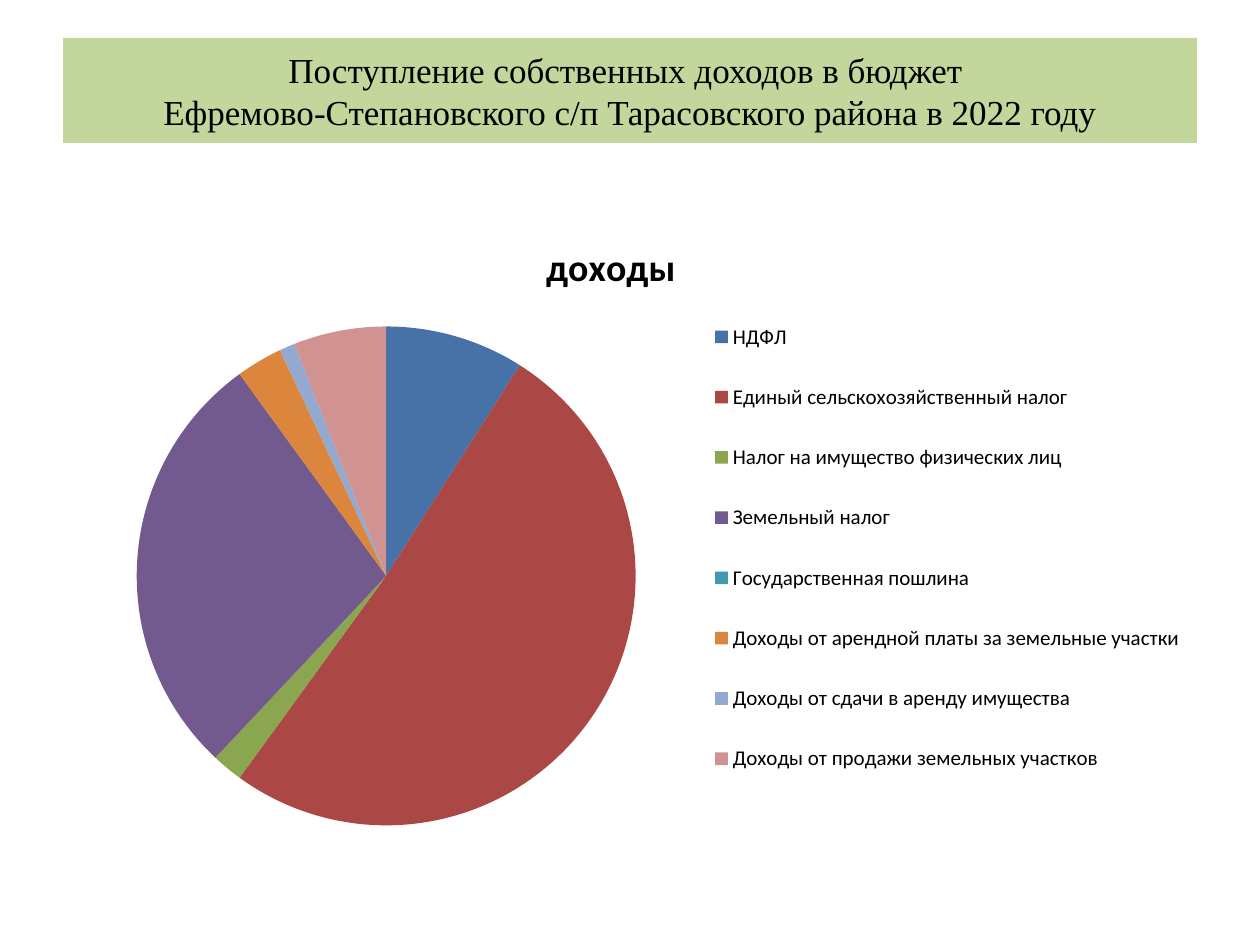
from dataclasses import dataclass
from pptx import Presentation
from pptx.chart.data import CategoryChartData as Data
from pptx.dml.color import RGBColor as RGB
from pptx.enum.chart import XL_CHART_TYPE as Kind, XL_LEGEND_POSITION as Side
from pptx.enum.text import MSO_ANCHOR as Anchor, MSO_AUTO_SIZE as Fit, PP_ALIGN as Align
from pptx.oxml import parse_xml
from pptx.oxml.ns import nsdecls
from pptx.util import Pt

BLACK = RGB(0x00, 0x00, 0x00)
LIME = RGB(0xC3, 0xD6, 0x9B)
BLUE = RGB(0x46, 0x72, 0xA8)
RED = RGB(0xAB, 0x47, 0x44)
GREEN = RGB(0x8A, 0xA6, 0x4F)
PLUM = RGB(0x72, 0x5A, 0x8F)
TEAL = RGB(0x42, 0x98, 0xAF)
AMBER = RGB(0xDC, 0x85, 0x3D)
SKY = RGB(0x93, 0xA9, 0xCF)
PINK = RGB(0xD1, 0x93, 0x92)


@dataclass
class Slice:
    name: str
    share: int
    color: RGB


SLICES = [
    Slice("НДФЛ", 9, BLUE),
    Slice("Единый сельскохозяйственный налог", 51, RED),
    Slice("Налог на имущество физических лиц", 2, GREEN),
    Slice("Земельный налог", 28, PLUM),
    Slice("Государственная пошлина", 0, TEAL),
    Slice("Доходы от арендной платы за земельные участки", 3, AMBER),
    Slice("Доходы от сдачи в аренду имущества", 1, SKY),
    Slice("Доходы от продажи земельных участков", 6, PINK),
]


def style(font, *, face: str, size: float, bold: bool = False) -> None:
    font.name = face
    font.size = Pt(size)
    font.bold = bold
    font.color.rgb = BLACK


def write(frame, text: str, *, align=Align.CENTER, **form) -> None:
    frame.text = text
    for para in frame.paragraphs:
        para.alignment = align
        for run in para.runs:
            style(run.font, **form)


def layout(x: float, y: float, w: float = 0, h: float = 0, inner: bool = False):
    parts = '<c:layoutTarget val="inner"/>' if inner else ""
    parts += '<c:xMode val="edge"/><c:yMode val="edge"/>'
    for key, val in zip("xywh", (x, y, w, h)):
        if val:
            parts += f'<c:{key} val="{val}"/>'
    return parse_xml(
        f'<c:layout {nsdecls("c")}><c:manualLayout>{parts}</c:manualLayout></c:layout>'
    )


def place(node, box, spot: int) -> None:
    for old in node.findall(box.tag):
        node.remove(old)
    node.insert(spot, box)


def draw_head(slide) -> None:
    head = slide.shapes.title
    head.left, head.top, head.width, head.height = Pt(36), Pt(21.6), Pt(648), Pt(60)
    head.fill.solid()
    head.fill.fore_color.rgb = LIME
    frame = head.text_frame
    frame.auto_size = Fit.NONE
    frame.vertical_anchor = Anchor.MIDDLE
    write(
        frame,
        "Поступление собственных доходов в бюджет \v"
        "Ефремово-Степановского с/п Тарасовского района в 2022 году",
        face="Times New Roman",
        size=20,
    )


def draw_pie(slide, slices: list[Slice]) -> None:
    data = Data()
    data.categories = [part.name for part in slices]
    data.add_series("доходы", [part.share for part in slices])
    chart = slide.shapes.add_chart(
        Kind.PIE, Pt(36), Pt(126), Pt(648), Pt(356.4), data
    ).chart
    style(chart.font, face="Calibri", size=18)

    chart.has_title = True
    title = chart.chart_title
    write(title.text_frame, "доходы", face="Calibri", size=21.6, bold=True)
    title.include_in_layout = False
    place(title._element, layout(0.42, 0.02), 1)

    chart.has_legend = True
    legend = chart.legend
    legend.position = Side.RIGHT
    legend.include_in_layout = False
    style(legend.font, face="Calibri", size=12)
    place(legend._element, layout(0.57, 0.11, 0.42, 0.83), 1)

    plot = chart.plots[0]
    plot.vary_by_categories = True
    for spot, part in enumerate(slices):
        fill = plot.series[0].points[spot].format.fill
        fill.solid()
        fill.fore_color.rgb = part.color
    area = plot._element.getparent()
    place(area, layout(0.06, 0.17, 0.45, 0.8, inner=True), 0)


def main() -> None:
    deck = Presentation()
    deck.slide_width, deck.slide_height = Pt(720), Pt(540)
    slide = deck.slides.add_slide(deck.slide_layouts[5])
    draw_head(slide)
    draw_pie(slide, SLICES)
    deck.save("out.pptx")


if __name__ == "__main__":
    main()
